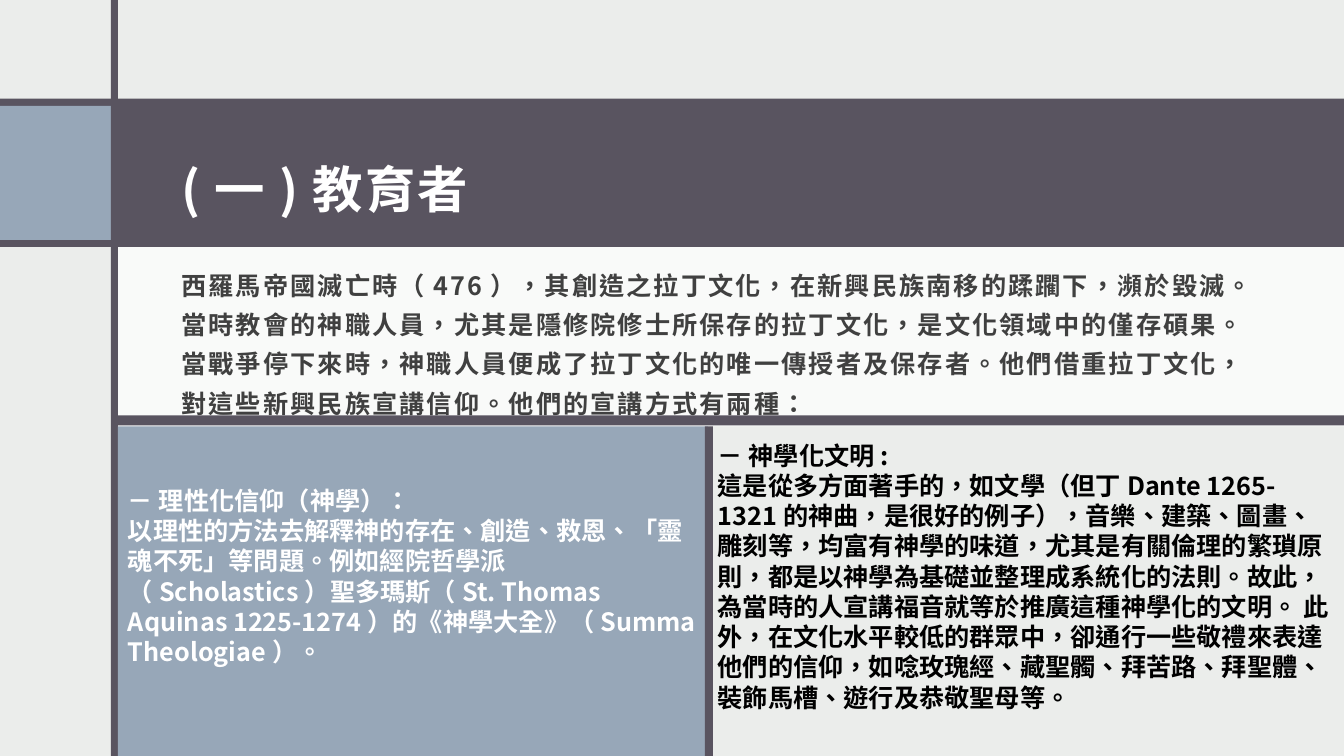
from lxml.etree import SubElement
from pptx import Presentation
from pptx.dml.color import RGBColor
from pptx.enum.shapes import MSO_SHAPE
from pptx.enum.text import MSO_ANCHOR, PP_ALIGN
from pptx.oxml.ns import qn
from pptx.util import Inches, Pt

FONT = "Noto Sans CJK JP"
COLORS = {
    "paper": "EBEDEB",
    "white": "FFFFFF",
    "plum": "595460",
    "blue": "97A7B8",
    "gray": "404040",
    "black": "000000",
}
WIDTH, HEIGHT = 13.33, 7.5
RULE_LEFT, RULE_WIDTH = 1.1, 0.07
CONTENT_LEFT = RULE_LEFT + RULE_WIDTH
BAND_TOP, BAND_HEIGHT = 0.98, 1.47
BAND_BOTTOM = BAND_TOP + BAND_HEIGHT
PANEL_TOP, PANEL_SPLIT = 4.23, 7.02
PANEL_HEIGHT = HEIGHT - PANEL_TOP
TEXT_LEFT = 1.68

presentation = Presentation()
presentation.slide_width = Inches(WIDTH)
presentation.slide_height = Inches(HEIGHT)
slide = presentation.slides.add_slide(presentation.slide_layouts[6])
slide.background.fill.solid()
slide.background.fill.fore_color.rgb = RGBColor.from_string(COLORS["paper"])


def add_block(left, top, width, height, color):
    shape = slide.shapes.add_shape(
        MSO_SHAPE.RECTANGLE, Inches(left), Inches(top), Inches(width), Inches(height))
    shape.shadow.inherit = False
    shape.fill.solid()
    shape.fill.fore_color.rgb = RGBColor.from_string(COLORS[color])
    shape.line.fill.background()
    return shape


def add_text(paragraph, text, size, color, tracking=0):
    """Add one bold run, with the font set for Latin and East Asian letters."""
    run = paragraph.add_run()
    run.text = text
    run.font.size = Pt(size)
    run.font.bold = True
    run.font.name = FONT
    run.font.color.rgb = RGBColor.from_string(COLORS[color])
    properties = run.font._element
    properties.set("lang", "zh-TW")
    if tracking:
        properties.set("spc", str(int(tracking * 100)))
    SubElement(properties, qn("a:ea")).set("typeface", FONT)


# Backdrop and title band
sheet = add_block(CONTENT_LEFT, BAND_BOTTOM, WIDTH - CONTENT_LEFT, HEIGHT - BAND_BOTTOM, "white")
sheet_color = sheet.fill._xPr.find(qn("a:solidFill"))[0]
SubElement(sheet_color, qn("a:alpha")).set("val", "75000")
add_block(0, BAND_TOP, WIDTH, BAND_HEIGHT, "plum")
add_block(0, BAND_TOP + RULE_WIDTH, RULE_LEFT, BAND_HEIGHT - 2 * RULE_WIDTH, "blue")
add_block(RULE_LEFT, 0, RULE_WIDTH, HEIGHT, "plum")

# Title and introduction
introduction = (
    "西羅馬帝國滅亡時（476），其創造之拉丁文化，在新興民族南移的蹂躙下，瀕於毀滅。"
    "當時教會的神職人員，尤其是隱修院修士所保存的拉丁文化，是文化領域中的僅存碩果。"
    "當戰爭停下來時，神職人員便成了拉丁文化的唯一傳授者及保存者。"
    "他們借重拉丁文化，對這些新興民族宣講信仰。他們的宣講方式有兩種："
)
for text, top, width, height, anchor, spacing, before, size, color in [
    ("(一)教育者", 1.14, 10.95, 1.13, MSO_ANCHOR.MIDDLE, 1.5, 0, 36, "white"),
    (introduction, 2.47, 10.87, 1.89, MSO_ANCHOR.TOP, 1.3, 9.3, 18, "gray"),
]:
    box = slide.shapes.add_textbox(Inches(TEXT_LEFT), Inches(top), Inches(width), Inches(height))
    frame = box.text_frame
    frame.word_wrap = True
    frame.vertical_anchor = anchor
    frame.margin_left = frame.margin_right = frame.margin_top = Inches(0.12)
    frame.margin_bottom = Inches(0.1)
    paragraph = frame.paragraphs[0]
    paragraph.line_spacing = spacing
    paragraph.space_before = Pt(before)
    add_text(paragraph, text, size, color, tracking=1.5)

# Two ways of preaching, side by side
panels = [
    (CONTENT_LEFT, PANEL_SPLIT, "blue", "white",
     "－ 理性化信仰（神學）：",
     "以理性的方法去解釋神的存在、創造、救恩、「靈魂不死」等問題。"
     "例如經院哲學派（Scholastics）聖多瑪斯（St. Thomas Aquinas 1225-1274）"
     "的《神學大全》（Summa Theologiae）。"),
    (PANEL_SPLIT, WIDTH, "paper", "black",
     "－ 神學化文明:",
     "這是從多方面著手的，如文學（但丁Dante 1265-1321的神曲，是很好的例子），"
     "音樂、建築、圖畫、雕刻等，均富有神學的味道，尤其是有關倫理的繁瑣原則，"
     "都是以神學為基礎並整理成系統化的法則。"
     "故此，為當時的人宣講福音就等於推廣這種神學化的文明。 "
     "此外，在文化水平較低的群眾中，卻通行一些敬禮來表達他們的信仰，"
     "如唸玫瑰經、藏聖髑、拜苦路、拜聖體、裝飾馬槽、遊行及恭敬聖母等。"),
]
for left, right, fill, color, heading, body in panels:
    panel = add_block(left, PANEL_TOP, right - left, PANEL_HEIGHT, fill)
    frame = panel.text_frame
    frame.word_wrap = True
    frame.vertical_anchor = MSO_ANCHOR.MIDDLE
    frame.margin_bottom = Inches(0.35)
    paragraph = frame.paragraphs[0]
    paragraph.alignment = PP_ALIGN.LEFT
    add_text(paragraph, heading, 18, color)
    paragraph.add_line_break()
    add_text(paragraph, body, 18, color)

# Rules around the panels
add_block(CONTENT_LEFT, 4.12, WIDTH - CONTENT_LEFT, 0.1, "plum")
add_block(6.99, PANEL_TOP, 0.08, PANEL_HEIGHT, "plum")

presentation.save("out.pptx")
